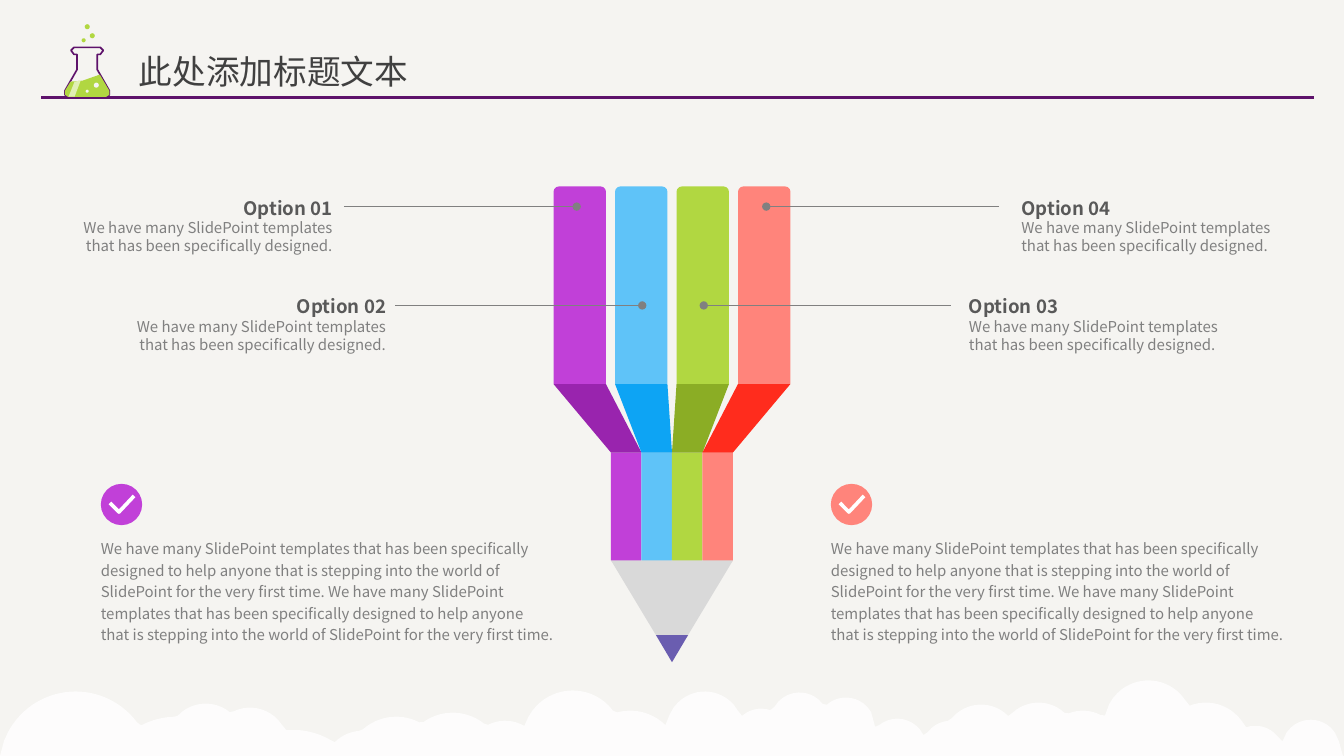
import pptx
import pptx.dml.color
import pptx.enum.shapes
import pptx.enum.text
import pptx.oxml.ns
import pptx.util
import lxml.etree

Inches = pptx.util.Inches
Pt = pptx.util.Pt
qn = pptx.oxml.ns.qn
KIND = pptx.enum.shapes.MSO_SHAPE
ALIGN = pptx.enum.text.PP_ALIGN

THEME = {
    "font": "Noto Sans CJK SC",
    "paper": "F5F4F1", "white": "FFFFFF", "title": "404040",
    "head": "595959", "body": "808080", "plum": "5E126B",
    "wood": "D9D9D9", "lead": "6A5DB0", "green": "B1D741",
    "shine": "E0EFB3", "purple": "C140D8", "coral": "FF847B",
    "title_pt": 24, "head_pt": 13.3, "body_pt": 10.7,
}

TITLE = "此处添加标题文本"
SHORT = "We have many SlidePoint templates that has been specifically designed."
LONG = ("We have many SlidePoint templates that has been specifically designed "
        "to help anyone that is stepping into the world of SlidePoint for the "
        "very first time.")

# name, text left, text top, alignment, line start, line dot
OPTIONS = [
    ("Option 01", 0.68, 1.95, ALIGN.RIGHT, 3.41, 5.72),
    ("Option 02", 1.21, 2.93, ALIGN.RIGHT, 3.92, 6.37),
    ("Option 04", 10.13, 1.95, ALIGN.LEFT, 9.91, 7.6),
    ("Option 03", 9.61, 2.93, ALIGN.LEFT, 9.43, 6.98),
]
NOTES = [(1, "purple"), (8.24, "coral")]

# light and dark shade of each pencil strip
STRIPS = [("C140D8", "9924AE"), ("5FC3F8", "0DA4F4"),
          ("B1D741", "8BAD25"), ("FF847B", "FF2C1D")]

# radius of the puffs: middle and top of each
PUFFS = {
    0.76: [(0.75, 6.86), (1.75, 7.11), (2.9, 7.24)],
    0.5: [(3.93, 7.11), (4.49, 7.07), (5.68, 6.85), (6.25, 7.05)],
    0.44: [(11.39, 6.75), (11.96, 6.97)],
    0.38: [(2.04, 6.98), (2.48, 7.02), (3.59, 7.25), (5.01, 7.15), (6.99, 6.86),
           (9.73, 6.99), (10.3, 6.97), (10.74, 7.05)],
    0.29: [(7.55, 7.03), (7.93, 6.87), (8.39, 6.92), (8.9, 7.13), (9.43, 7.15),
           (12.45, 7.2), (13, 7.14)],
}
# right half of the flask: distance from its axis, height on the slide
AXIS = 0.865
FLASK = [(0.13, 0.47), (0.16, 0.5), (0.13, 0.54), (0.1, 0.54), (0.1, 0.69),
         (0.22, 0.9), (0.22, 0.94), (0.19, 0.96)]
SURFACE = [(0.7, 0.81), (0.82, 0.8), (0.99, 0.74)]
SHINE = [(0.68, 0.96), (0.74, 0.96), (0.8, 0.8), (0.74, 0.81)]
# left, top, size, colour
BUBBLES = [(0.85, 0.89, 0.03, "paper"), (0.93, 0.82, 0.05, "paper"),
           (0.81, 0.38, 0.04, "green"), (0.89, 0.33, 0.05, "green"),
           (0.84, 0.24, 0.05, "green")]


def rgb(name):
    return pptx.dml.color.RGBColor.from_string(THEME.get(name, name))


def paint(shape, fill=None, line=None, width=1):
    shape.shadow.inherit = False
    if fill:
        shape.fill.solid()
        shape.fill.fore_color.rgb = rgb(fill)
    else:
        shape.fill.background()
    if line:
        shape.line.color.rgb = rgb(line)
        shape.line.width = Pt(width)
    else:
        shape.line.fill.background()
    return shape


def outline(home, dots, fill=None, line=None, width=1, close=True):
    dots = [(Inches(x), Inches(y)) for x, y in dots]
    pen = home.build_freeform(*dots[0], scale=1.0)
    pen.add_line_segments(dots[1:], close=close)
    return paint(pen.convert_to_shape(), fill, line, width)


def preset(home, kind, left, top, wide, high, fill):
    box = map(Inches, (left, top, wide, high))
    return paint(home.add_shape(kind, *box), fill)


def rule(home, start, end, y, color, width, dot=False):
    line = home.add_connector(pptx.enum.shapes.MSO_CONNECTOR.STRAIGHT,
                              Inches(start), Inches(y), Inches(end), Inches(y))
    line.line.color.rgb = rgb(color)
    line.line.width = Pt(width)
    if dot:
        stroke = line.element.spPr.find(qn("a:ln"))
        lxml.etree.SubElement(stroke, qn("a:tailEnd"), type="oval")
    lxml.etree.SubElement(line.element.spPr, qn("a:effectLst"))


def label(home, left, top, wide, high, rows, align=ALIGN.LEFT, space=None, wrap=True):
    """Add a text box; each row is (text, style, bold)."""
    box = home.add_textbox(*map(Inches, (left, top, wide, high)))
    frame = box.text_frame
    frame.word_wrap = wrap
    frame.auto_size = pptx.enum.text.MSO_AUTO_SIZE.SHAPE_TO_FIT_TEXT
    if wrap:
        frame.margin_left = frame.margin_right = 0
        frame.margin_top = frame.margin_bottom = 0
    frame.text = "\n".join(row[0] for row in rows)
    for para, (_, style, bold) in zip(frame.paragraphs, rows):
        para.alignment = align
        if space:
            para.line_spacing = space
        run = para.runs[0]
        run.font.name = THEME["font"]
        run.font.size = Pt(THEME[style + "_pt"])
        run.font.bold = bold
        run.font.color.rgb = rgb(style)
        props = run.font.element if hasattr(run.font, "element") else run._r.rPr
        lxml.etree.SubElement(props, qn("a:ea"), typeface=THEME["font"])


def clouds(home, floor=7.5, wide=13.32, step=0.04):
    """Draw the skyline of all the puffs as one outline."""
    dots = [(wide, floor), (0, floor)]
    for i in range(int(wide / step) + 1):
        x = i * step
        tops = [top + r - (r * r - (x - mid) ** 2) ** 0.5
                for r, puffs in PUFFS.items() for mid, top in puffs
                if abs(x - mid) < r]
        dots.append((x, min(tops + [floor])))
    shape = outline(home, dots, "white")
    tint = shape.element.spPr.find(qn("a:solidFill")).find(qn("a:srgbClr"))
    lxml.etree.SubElement(tint, qn("a:alpha"), val="80000")


def pencil(home):
    top, bend, neck, tip, cut, end = 1.85, 3.81, 4.49, 5.56, 6.3, 6.57
    left, wide, pitch = 5.49, 0.52, 0.61
    low, high = 6.06, 7.27
    thin = (high - low) / len(STRIPS)
    for i, (light, dark) in enumerate(STRIPS):
        a, c = left + i * pitch, low + i * thin
        b, d = a + wide, c + thin
        bar = preset(home, KIND.ROUND_2_SAME_RECTANGLE, a, top, wide, bend - top, light)
        bar.adjustments[0] = 0.1
        outline(home, [(c, neck), (d, neck), (d, tip), ((c + d) / 2, tip + 0.15),
                       (c, tip)], light)
        outline(home, [(a, bend), (b, bend), (d, neck), (c, neck)], dark)
    mid, half = (low + high) / 2, 0.16
    outline(home, [(low, tip), (high, tip), (mid + half, cut), (mid - half, cut)], "wood")
    outline(home, [(mid - half, cut), (mid + half, cut), (mid, end)], "lead")


def tick(home, left, color):
    preset(home, KIND.OVAL, left, 4.8, 0.41, 0.41, color)
    outline(home, [(left + 0.09, 4.99), (left + 0.18, 5.08), (left + 0.33, 4.92)],
            line="white", width=2.63, close=False)


def mirror(half):
    right = [(AXIS + x, y) for x, y in half]
    return right + [(AXIS - x, y) for x, y in reversed(half)]


def flask(home):
    outline(home, mirror(FLASK), "paper", "plum", 1.2)
    outline(home, SURFACE + mirror(FLASK[-3:]), "green")
    outline(home, SHINE, "shine")
    for left, top, size, color in BUBBLES:
        preset(home, KIND.OVAL, left, top, size, size, color)


def main():
    deck = pptx.Presentation()
    deck.slide_width, deck.slide_height = Inches(13.33), Inches(7.5)
    slide = deck.slides.add_slide(deck.slide_layouts[6])
    slide.background.fill.solid()
    slide.background.fill.fore_color.rgb = rgb("paper")
    home = slide.shapes

    clouds(home)
    pencil(home.add_group_shape().shapes)
    for left, color in NOTES:
        tick(home.add_group_shape().shapes, left, color)
        label(home, left, 5.32, 4.51, 1.08, [(LONG + " " + LONG, "body", False)], space=1.2)
    for name, left, top, align, start, dot in OPTIONS:
        label(home, left, top, 2.62, 0.58,
              [(name, "head", True), (SHORT, "body", False)], align)
        rule(home, start, dot, top + 0.1, "body", 0.5, dot=True)

    label(home, 1.28, 0.46, 2.89, 0.5, [(TITLE, "title", False)], wrap=False)
    rule(home, 0.41, 13.03, 0.97, "plum", 2)
    flask(home.add_group_shape().shapes)
    deck.save("out.pptx")


if __name__ == "__main__":
    main()
